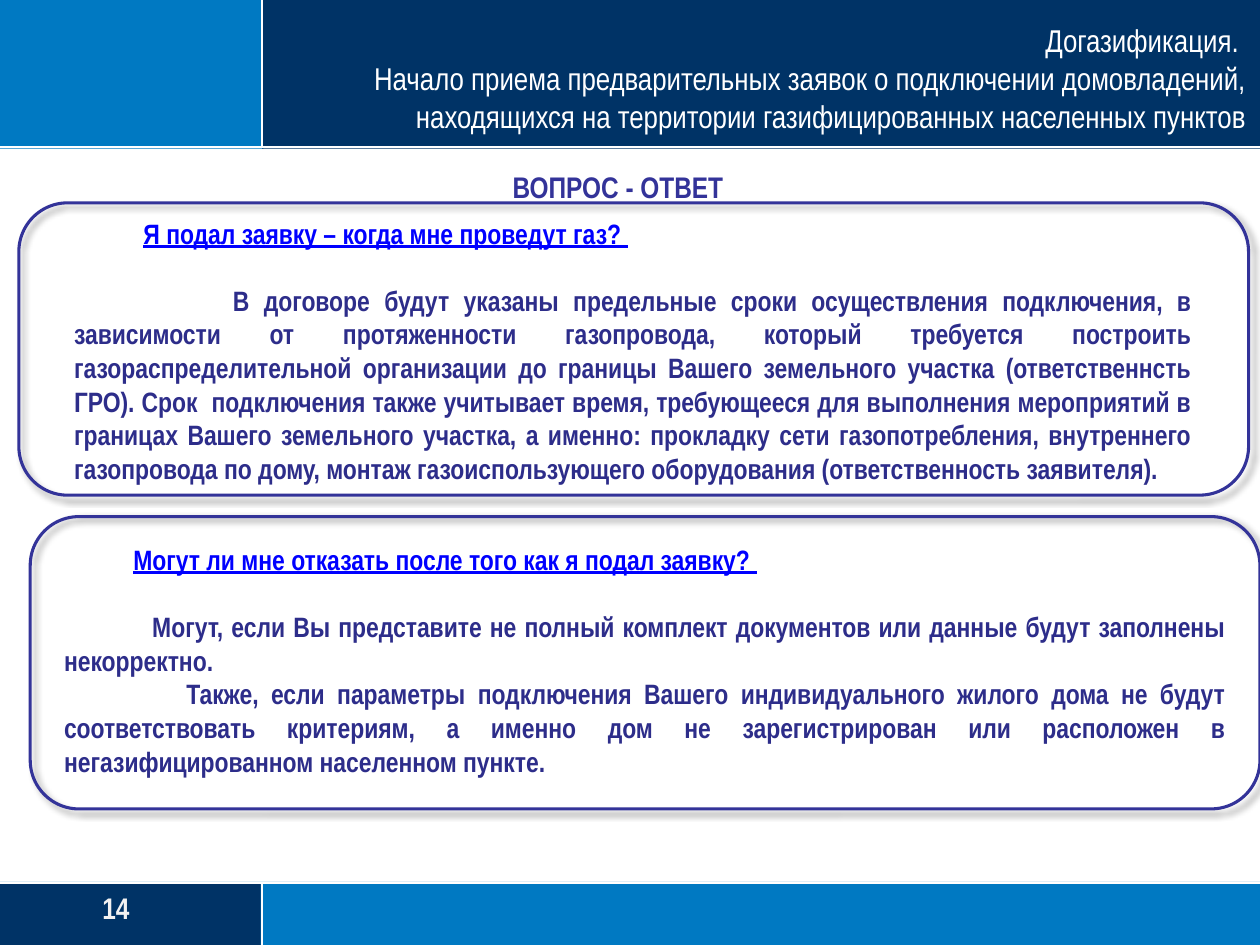
from dataclasses import dataclass

import pptx
import pptx.dml.color
import pptx.enum.shapes
import pptx.enum.text
import pptx.oxml
import pptx.oxml.ns
import pptx.util
from pptx.util import Inches

COLORS = {
    "navy": "003366",
    "blue": "0079C2",
    "white": "FFFFFF",
    "indigo": "333399",
    "question": "0000FF",
    "answer": "2D2D8A",
    "number": "F2F2F2",
}
FONT = "Arial Narrow"
SHAPES = pptx.enum.shapes.MSO_SHAPE
ALIGN = pptx.enum.text.PP_ALIGN
ANCHOR = pptx.enum.text.MSO_ANCHOR
SHADOW = (
    f'<a:effectLst {pptx.oxml.ns.nsdecls("a")}>'
    '<a:outerShdw blurRad="50800" dist="38100" dir="2700000" algn="tl" rotWithShape="0">'
    '<a:srgbClr val="000000"><a:alpha val="40000"/></a:srgbClr>'
    "</a:outerShdw></a:effectLst>"
)


@dataclass
class Box:
    left: float
    top: float
    width: float
    height: float

    def lengths(self):
        return [Inches(v) for v in (self.left, self.top, self.width, self.height)]


@dataclass
class Line:
    text: str
    size: float
    color: str
    align: ALIGN = ALIGN.LEFT
    bold: bool = True
    underline: bool = False
    indent: float = 0
    before: float = 0


@dataclass
class Answer:
    text: str
    indent: float


@dataclass
class Card:
    frame: Box
    text_box: Box
    question: str
    answers: list[Answer]


def rgb(name: str):
    return pptx.dml.color.RGBColor.from_string(COLORS[name])


def draw_band(slide, box: Box, color: str) -> None:
    band = slide.shapes.add_shape(SHAPES.RECTANGLE, *box.lengths())
    band.shadow.inherit = False
    band.fill.solid()
    band.fill.fore_color.rgb = rgb(color)
    band.line.fill.background()


def draw_rule(slide, x1: float, y1: float, x2: float, y2: float) -> None:
    rule = slide.shapes.add_connector(
        pptx.enum.shapes.MSO_CONNECTOR.STRAIGHT,
        Inches(x1), Inches(y1), Inches(x2), Inches(y2))
    rule.line.color.rgb = rgb("white")
    rule.line.width = pptx.util.Pt(1.25)
    rule._element.spPr.append(pptx.oxml.parse_xml(
        f'<a:effectLst {pptx.oxml.ns.nsdecls("a")}/>'))


def draw_text(slide, box: Box, lines: list[Line], anchor=ANCHOR.TOP, inset: bool = True) -> None:
    frame = slide.shapes.add_textbox(*box.lengths()).text_frame
    frame.word_wrap = True
    frame.vertical_anchor = anchor
    if not inset:
        frame.margin_left = frame.margin_right = 0
        frame.margin_top = frame.margin_bottom = 0
    for i, line in enumerate(lines):
        paragraph = frame.paragraphs[0] if i == 0 else frame.add_paragraph()
        paragraph.text = line.text
        paragraph.alignment = line.align
        if line.before:
            paragraph.space_before = pptx.util.Pt(line.before)
        if line.indent:
            properties = paragraph._p.get_or_add_pPr()
            properties.set("marL", "0")
            properties.set("indent", str(Inches(line.indent)))
        for run in paragraph.runs:
            run.font.name = FONT
            run.font.size = pptx.util.Pt(line.size)
            run.font.bold = line.bold
            run.font.underline = line.underline
            run.font.color.rgb = rgb(line.color)


def draw_card(slide, card: Card) -> None:
    outline = slide.shapes.add_shape(SHAPES.ROUNDED_RECTANGLE, *card.frame.lengths())
    outline.fill.background()
    outline.line.color.rgb = rgb("indigo")
    outline.line.width = pptx.util.Pt(1.75)
    outline._element.spPr.append(pptx.oxml.parse_xml(SHADOW))
    lines = [Line(card.question, 16, "question", underline=True, indent=0.55)]
    for i, answer in enumerate(card.answers):
        lines.append(Line(answer.text, 16, "answer", ALIGN.JUSTIFY,
                          indent=answer.indent, before=0 if i else 19))
    draw_text(slide, card.text_box, lines)


CARDS = [
    Card(Box(0.15, 1.61, 9.76, 2.32), Box(0.49, 1.67, 9.07, 2.26),
         "Я подал заявку – когда мне проведут газ? ",
         [Answer("В договоре будут указаны предельные сроки осуществления подключения, "
                 "в зависимости от протяженности газопровода, который требуется построить "
                 "газораспределительной организации до границы Вашего земельного участка "
                 "(ответственнсть ГРО). Срок  подключения также учитывает время, требующееся "
                 "для выполнения мероприятий в границах Вашего земельного участка, а именно: "
                 "прокладку сети газопотребления, внутреннего газопровода по дому, монтаж "
                 "газоиспользующего оборудования (ответственность заявителя).", 1.26)]),
    Card(Box(0.24, 4.1, 9.76, 2.32), Box(0.41, 4.26, 9.42, 1.99),
         "Могут ли мне отказать после того как я подал заявку? ",
         [Answer("Могут, если Вы представите не полный комплект документов или данные "
                 "будут заполнены некорректно.", 0.7),
          Answer("Также, если параметры подключения Вашего индивидуального жилого дома "
                 "не будут соответствовать критериям, а именно дом не зарегистрирован или "
                 "расположен в негазифицированном населенном пункте.", 0.97)]),
]


def main() -> None:
    deck = pptx.Presentation()
    deck.slide_width, deck.slide_height = Inches(10), Inches(7.5)
    slide = deck.slides.add_slide(deck.slide_layouts[6])

    # Footer and header bands
    draw_band(slide, Box(0, 7, 10, 0.5), "blue")
    draw_band(slide, Box(0, 7.01, 2.07, 0.49), "navy")
    draw_band(slide, Box(0, 0, 2.09, 1.18), "blue")
    draw_band(slide, Box(2.08, 0, 7.92, 1.18), "navy")

    # White rules along the bands
    for y in (1.17, 7.01):
        draw_rule(slide, 0, y, 10, y)
    for top, bottom in ((0, 1.17), (7, 7.5)):
        draw_rule(slide, 2.08, top, 2.08, bottom)

    # Title and heading
    titles = ["Догазификация. ",
              "Начало приема предварительных заявок о подключении домовладений, "
              "находящихся на территории газифицированных населенных пунктов"]
    draw_text(slide, Box(2.26, 0, 7.63, 1.07),
              [Line(text, 18, "white", ALIGN.RIGHT, bold=False) for text in titles],
              ANCHOR.BOTTOM, inset=False)
    draw_text(slide, Box(3.45, 1.29, 2.91, 0.39),
              [Line("ВОПРОС - ОТВЕТ", 17, "indigo", ALIGN.CENTER)])

    # Questions with answers
    for card in CARDS:
        draw_card(slide, card)

    # Page number
    draw_text(slide, Box(0.41, 7.01, 1.02, 0.39),
              [Line("14", 17, "number", ALIGN.CENTER)])

    deck.save("out.pptx")


if __name__ == "__main__":
    main()
